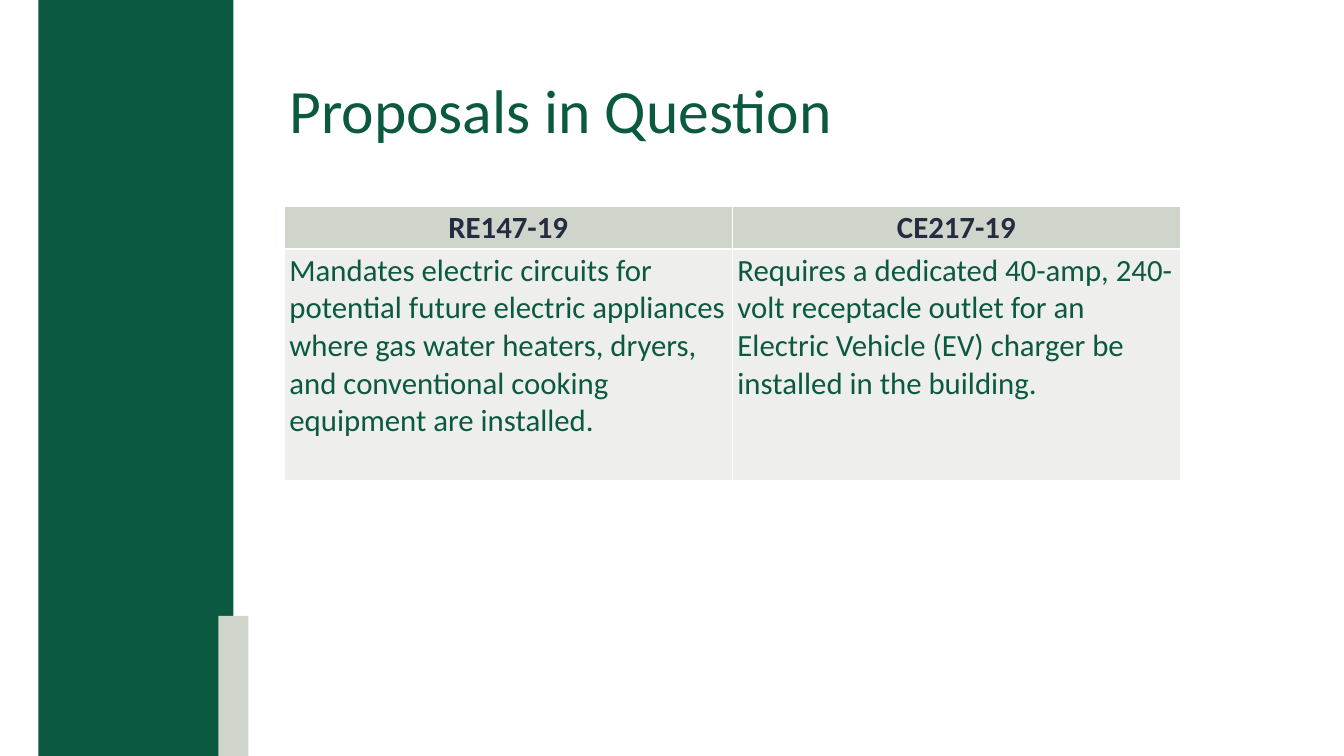
from dataclasses import dataclass

from lxml.etree import SubElement
from pptx import Presentation
from pptx.dml.color import RGBColor
from pptx.enum.shapes import MSO_SHAPE
from pptx.enum.text import MSO_ANCHOR, MSO_AUTO_SIZE, PP_ALIGN
from pptx.oxml.ns import qn
from pptx.slide import Slide
from pptx.table import _Cell as Cell
from pptx.util import Cm, Pt

GREEN = RGBColor(0x0B, 0x59, 0x40)
SAGE = RGBColor(0xD0, 0xD5, 0xCB)
PALE_SAGE = RGBColor(0xEE, 0xEF, 0xEC)
NAVY = RGBColor(0x24, 0x2C, 0x41)
WHITE = RGBColor(0xFF, 0xFF, 0xFF)
FONT = "Calibri"
CONTENT_LEFT = Cm(14.33)


@dataclass
class Bar:
    left: float
    top: float
    width: float
    height: float
    color: RGBColor


@dataclass
class RowStyle:
    height: float
    fill: RGBColor
    color: RGBColor
    bold: bool
    align: PP_ALIGN
    borders: dict[str, float]  # edge tag -> width in points


BARS = [
    Bar(1.93, 0, 9.83, 38.1, GREEN),
    Bar(11, 31.04, 1.52, 7.06, SAGE),
]
HEADER = RowStyle(2.12, SAGE, NAVY, True, PP_ALIGN.CENTER,
                  {"lnL": 1, "lnR": 1, "lnT": 1, "lnB": 3})
BODY = RowStyle(11.62, PALE_SAGE, GREEN, False, PP_ALIGN.LEFT,
                {"lnL": 1, "lnR": 1, "lnT": 3, "lnB": 1})
PROPOSALS = [
    (HEADER, ["RE147-19", "CE217-19"]),
    (BODY, [
        "Mandates electric circuits for potential future electric appliances "
        "where gas water heaters, dryers, and conventional cooking equipment "
        "are installed.",
        "Requires a dedicated 40-amp, 240-volt receptacle outlet for an "
        "Electric Vehicle (EV) charger be installed in the building.",
    ]),
]


def add_bar(slide: Slide, bar: Bar) -> None:
    shape = slide.shapes.add_shape(MSO_SHAPE.RECTANGLE, Cm(bar.left), Cm(bar.top),
                                   Cm(bar.width), Cm(bar.height))
    shape.shadow.inherit = False
    shape.fill.solid()
    shape.fill.fore_color.rgb = bar.color
    shape.line.fill.background()


def format_title(slide: Slide, text: str) -> None:
    title = slide.shapes.title
    title.left, title.top = CONTENT_LEFT, Cm(2.03)
    title.width, title.height = Cm(43.26), Cm(7.37)
    frame = title.text_frame
    frame.text = text
    frame.auto_size = MSO_AUTO_SIZE.NONE
    frame.vertical_anchor = MSO_ANCHOR.MIDDLE
    paragraph = frame.paragraphs[0]
    paragraph.alignment = PP_ALIGN.LEFT
    paragraph.line_spacing = 0.9
    paragraph.font.name = FONT
    paragraph.font.size = Pt(88)
    paragraph.font.color.rgb = GREEN


def set_borders(cell: Cell, borders: dict[str, float]) -> None:
    properties = cell._tc.get_or_add_tcPr()
    for edge, width in borders.items():
        line = SubElement(properties, qn(f"a:{edge}"), w=str(Pt(width)))
        fill = SubElement(line, qn("a:solidFill"))
        SubElement(fill, qn("a:srgbClr"), val=str(WHITE))


def fill_cell(cell: Cell, text: str, style: RowStyle) -> None:
    set_borders(cell, style.borders)
    cell.fill.solid()
    cell.fill.fore_color.rgb = style.fill
    cell.text = text
    paragraph = cell.text_frame.paragraphs[0]
    paragraph.alignment = style.align
    paragraph.font.name = FONT
    paragraph.font.size = Pt(44)
    paragraph.font.bold = style.bold
    paragraph.font.color.rgb = style.color


def add_proposals(slide: Slide) -> None:
    height = sum(style.height for style, _ in PROPOSALS)
    table = slide.shapes.add_table(len(PROPOSALS), 2, CONTENT_LEFT, Cm(10.41),
                                   Cm(45.16), Cm(height)).table
    for row, (style, texts) in zip(table.rows, PROPOSALS):
        row.height = Cm(style.height)
        for cell, text in zip(row.cells, texts):
            fill_cell(cell, text, style)


def main() -> None:
    presentation = Presentation()
    presentation.slide_width = Cm(67.73)
    presentation.slide_height = Cm(38.1)
    slide = presentation.slides.add_slide(presentation.slide_layouts[5])

    # Side decoration
    for bar in BARS:
        add_bar(slide, bar)

    # Title and table
    format_title(slide, "Proposals in Question")
    add_proposals(slide)

    presentation.save("out.pptx")


if __name__ == "__main__":
    main()
